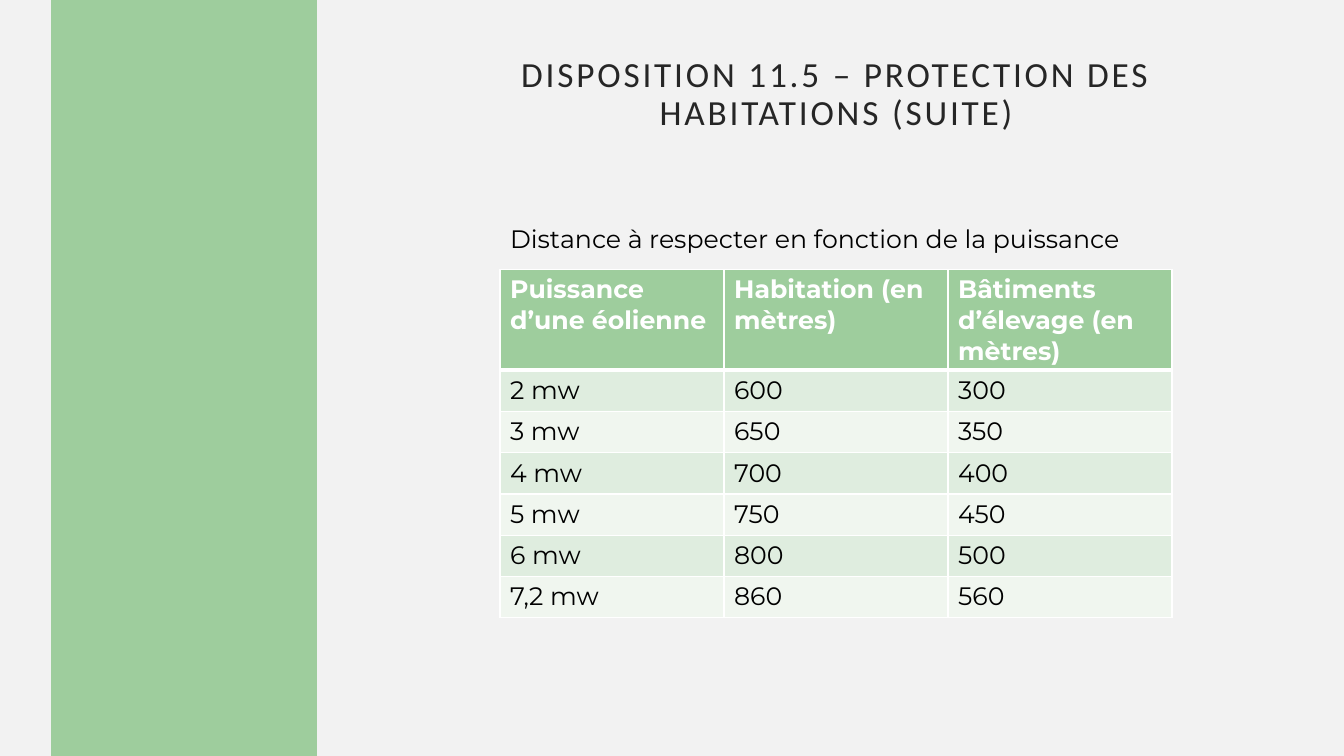
import pptx
import pptx.util
import pptx.dml.color
import pptx.enum.shapes
import pptx.enum.text
import pptx.oxml
import pptx.oxml.ns

# Content
TITLE = "DISPOSITION\u00a011.5 – PROTECTION DES HABITATIONS (SUITE)"
CAPTION = "Distance à respecter en fonction de la puissance"
HEADER = ("Puissance d’une éolienne", "Habitation (en mètres)",
          "Bâtiments d’élevage (en mètres)")
DISTANCES = [
    ("2 mw", "600", "300"),
    ("3 mw", "650", "350"),
    ("4 mw", "700", "400"),
    ("5 mw", "750", "450"),
    ("6 mw", "800", "500"),
    ("7,2 mw", "860", "560"),
]


class Theme:
    background = "F2F2F2"
    green = "9ECD9D"
    bands = ("DFEDDF", "F0F6EF")
    title = "262626"
    text = "000000"
    white = "FFFFFF"
    title_font, body_font = "Calibri", "Montserrat"
    title_size, body_size = 25.2, 18


# Layout, in inches
WIDTH, HEIGHT = 13.33, 7.5
BAND = (0.51, 0, 2.63, HEIGHT)
TITLE_BOX = (4.07, 0.58, 8.45, 0.73)
LEFT, TABLE_TOP, TABLE_WIDTH = 4.96, 2.67, WIDTH / 2
HEADER_HEIGHT, ROW_HEIGHT = 0.43, 0.41
CAPTION_BOX = (LEFT, 2.17, TABLE_WIDTH, 0.4)


def inches(box):
    return [pptx.util.Inches(v) for v in box]


def paint(fill, color):
    fill.solid()
    fill.fore_color.rgb = pptx.dml.color.RGBColor.from_string(color)


def write(tf, text, font, size, color, bold=False):
    tf.word_wrap = True
    p = tf.paragraphs[0]
    p.text = text
    r = p.runs[0]
    r.font.name, r.font.size, r.font.bold = font, pptx.util.Pt(size), bold
    r.font.color.rgb = pptx.dml.color.RGBColor.from_string(color)
    return p


def add_borders(cell, widths):
    """Draw white cell edges; widths maps edge letters to points."""
    tc_pr = cell._tc.get_or_add_tcPr()
    for i, (edge, width) in enumerate(widths.items()):
        tc_pr.insert(i, pptx.oxml.parse_xml(
            f'<a:ln{edge} {pptx.oxml.ns.nsdecls("a")} w="{pptx.util.Pt(width)}">'
            f'<a:solidFill><a:srgbClr val="{Theme.white}"/></a:solidFill></a:ln{edge}>'))


prs = pptx.Presentation()
prs.slide_width, prs.slide_height = inches((WIDTH, HEIGHT))
s = prs.slides.add_slide(prs.slide_layouts[6])
paint(s.background.fill, Theme.background)

# Green side band
sp = s.shapes.add_shape(
    pptx.enum.shapes.MSO_SHAPE.FLOWCHART_PROCESS, *inches(BAND))
sp.shadow.inherit = False
paint(sp.fill, Theme.green)
sp.line.fill.background()

# Title
tf = s.shapes.add_textbox(*inches(TITLE_BOX)).text_frame
tf.margin_left = tf.margin_right = pptx.util.Inches(0.2)
tf.margin_top = tf.margin_bottom = pptx.util.Inches(0.2)
tf.vertical_anchor = pptx.enum.text.MSO_ANCHOR.MIDDLE
p = write(tf, TITLE, Theme.title_font, Theme.title_size, Theme.title)
p.alignment = pptx.enum.text.PP_ALIGN.CENTER
p.line_spacing = 0.9
p.runs[0]._r.get_or_add_rPr().set("spc", "200")

# Distance table
rows = [HEADER] + DISTANCES
table = s.shapes.add_table(
    len(rows), len(HEADER),
    *inches((LEFT, TABLE_TOP, TABLE_WIDTH,
             HEADER_HEIGHT + ROW_HEIGHT * len(DISTANCES)))).table
for i, row in enumerate(rows):
    is_header = i == 0
    table.rows[i].height = pptx.util.Inches(
        HEADER_HEIGHT if is_header else ROW_HEIGHT)
    for j, text in enumerate(row):
        cell = table.cell(i, j)
        write(cell.text_frame, text, Theme.body_font, Theme.body_size,
              Theme.white if is_header else Theme.text, is_header)
        paint(cell.fill, Theme.green if is_header else Theme.bands[(i - 1) % 2])
        add_borders(cell, {"L": 1, "R": 1, "T": 3 if i == 1 else 1,
                           "B": 3 if is_header else 1})

# Caption above the table
tf = s.shapes.add_textbox(*inches(CAPTION_BOX)).text_frame
write(tf, CAPTION, Theme.body_font, Theme.body_size, Theme.text)
tf.auto_size = pptx.enum.text.MSO_AUTO_SIZE.SHAPE_TO_FIT_TEXT

prs.save("out.pptx")
